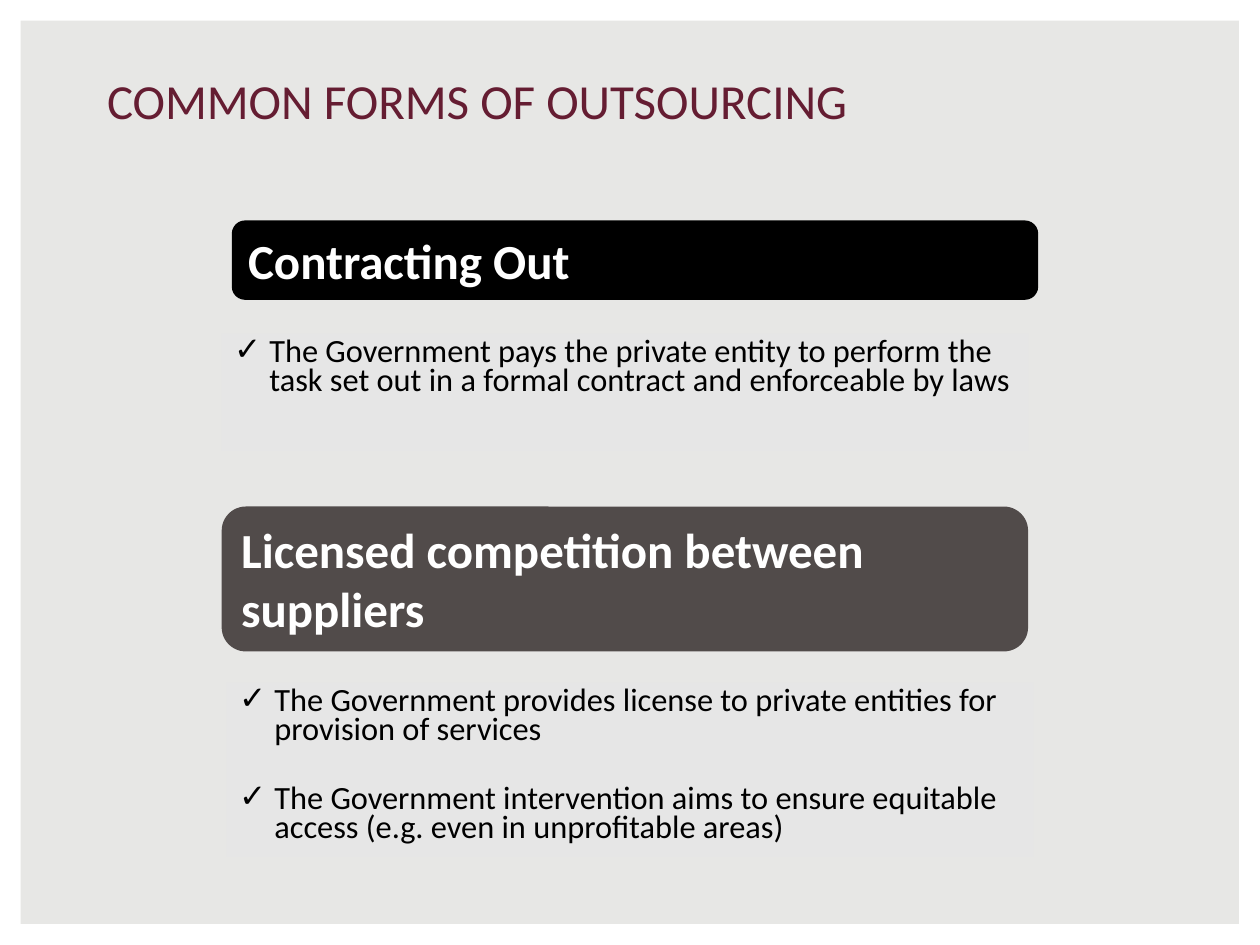
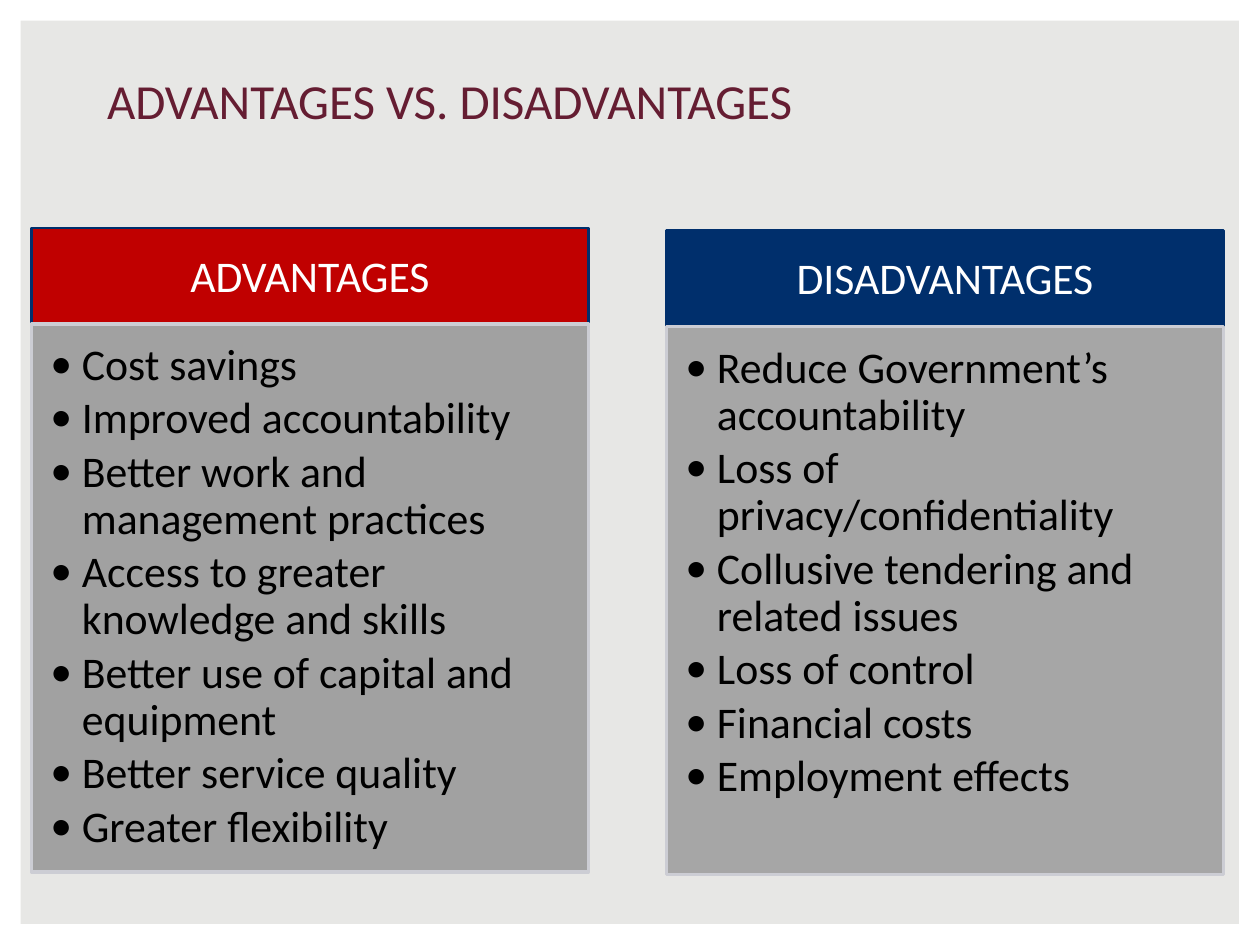
from lxml import etree
from pptx import Presentation
from pptx.dml.color import RGBColor
from pptx.enum.shapes import MSO_SHAPE
from pptx.enum.text import MSO_ANCHOR, PP_ALIGN
from pptx.oxml.ns import qn
from pptx.util import Inches, Pt

FONT = "Calibri"
BACKGROUND, WHITE, BLACK = "E7E7E5", "FFFFFF", "000000"
MAROON, RED, NAVY, BROWN = "651D32", "C00000", "002F6C", "514B4A"
PANEL, EDGE = "E6E6E6", "CCCDD4"

TITLE_FONT = {"name": FONT, "size": Pt(28), "bold": False}
BANNER_FONT = {"name": FONT, "size": Pt(28), "bold": True}
DETAIL_FONT = {"name": FONT, "size": Pt(18.5)}
COLUMN_FONT = {"name": FONT, "size": Pt(25)}

DETAIL_SPACING = {"line_spacing": Pt(16.6), "space_after": Pt(22.8)}
COLUMN_SPACING = {"line_spacing": 0.9, "space_after": Pt(3.5)}
HEADER_SPACING = {"alignment": PP_ALIGN.CENTER, "line_spacing": 0.9}

HEADER_MARGINS = (0.19, 0.11, 0.19, 0.11)
COLUMN_MARGINS = (0.15, 0.15, 0.19, 0.22)
DEFAULT_MARGINS = (0.1, 0.05, 0.1, 0.05)

ADVANTAGES = [
    "Cost savings",
    "Improved accountability",
    "Better work and management practices",
    "Access to greater knowledge and skills",
    "Better use of capital and equipment",
    "Better service quality",
    "Greater flexibility",
]
DISADVANTAGES = [
    "Reduce Government’s accountability",
    "Loss of privacy/confidentiality",
    "Collusive tendering and related issues",
    "Loss of control",
    "Financial costs",
    "Employment effects",
]


def color(value):
    """Turn a hex string into a colour."""
    return RGBColor.from_string(value)


def apply(target, values):
    """Set every attribute named in a dict of format values."""
    for name, value in values.items():
        setattr(target, name, value)


def add_bullet(paragraph, symbol, indent):
    """Give a paragraph a hanging bullet."""
    properties = paragraph._p.get_or_add_pPr()
    properties.set("marL", str(Inches(indent)))
    properties.set("indent", str(-Inches(indent)))
    etree.SubElement(properties, qn("a:buFont")).set("typeface", FONT)
    etree.SubElement(properties, qn("a:buChar")).set("char", symbol)


def write_text(shape, lines, font, font_color, spacing=None, bullet=None,
               anchor=MSO_ANCHOR.TOP, margins=DEFAULT_MARGINS):
    """Fill a shape with formatted paragraphs."""
    frame = shape.text_frame
    sides = ("margin_left", "margin_top", "margin_right", "margin_bottom")
    apply(frame, dict(zip(sides, map(Inches, margins))))
    apply(frame, {"word_wrap": True, "vertical_anchor": anchor})
    frame.text = "\n".join(lines)
    for paragraph in frame.paragraphs:
        apply(paragraph, {"alignment": PP_ALIGN.LEFT, **(spacing or {})})
        if bullet:
            add_bullet(paragraph, *bullet)
        for run in paragraph.runs:
            apply(run.font, font)
            run.font.color.rgb = color(font_color)


def add_box(slide, kind, box, fill, line=None, line_width=1.5):
    """Add a flat preset shape with an optional outline."""
    shape = slide.shapes.add_shape(kind, *map(Inches, box))
    shape.shadow.inherit = False
    shape.fill.solid()
    shape.fill.fore_color.rgb = color(fill)
    if line:
        shape.line.color.rgb = color(line)
        shape.line.width = Pt(line_width)
    else:
        shape.line.fill.background()
    return shape


def add_titled_slide(presentation, title):
    """Add a slide with the shared frame and title."""
    slide = presentation.slides.add_slide(presentation.slide_layouts[5])
    border = add_box(slide, MSO_SHAPE.FRAME, (0, 0, 10, 7.5), WHITE)
    border.adjustments[0] = 0.022
    position = dict(zip(("left", "top", "width", "height"),
                        map(Inches, (0.75, 0.51, 8.5, 0.57))))
    apply(slide.shapes.title, position)
    write_text(slide.shapes.title, [title], TITLE_FONT, MAROON,
               anchor=MSO_ANCHOR.BOTTOM)
    return slide


def add_banner(slide, text, box, fill):
    """Add a rounded heading banner."""
    banner = add_box(slide, MSO_SHAPE.ROUNDED_RECTANGLE, box, fill)
    write_text(banner, [text], BANNER_FONT, WHITE)


def add_details(slide, lines, box):
    """Add a panel of check-marked details."""
    panel = add_box(slide, MSO_SHAPE.RECTANGLE, box, PANEL)
    write_text(panel, lines, DETAIL_FONT, BLACK, DETAIL_SPACING, ("✓", 0.28))


def add_column(slide, heading, lines, left, top, header_fill, body_fill, edge_width):
    """Add a coloured header above a bulleted column."""
    header = add_box(slide, MSO_SHAPE.RECTANGLE, (left, top, 4.42, 0.79),
                     header_fill, NAVY)
    write_text(header, [heading], COLUMN_FONT, WHITE, HEADER_SPACING,
               anchor=MSO_ANCHOR.MIDDLE, margins=HEADER_MARGINS)
    body = add_box(slide, MSO_SHAPE.RECTANGLE, (left, top + 0.76, 4.42, 4.35),
                   body_fill, EDGE, edge_width)
    write_text(body, lines, COLUMN_FONT, BLACK, COLUMN_SPACING, ("•", 0.25),
               margins=COLUMN_MARGINS)


def add_forms_slide(presentation):
    """Build the slide on common forms of outsourcing."""
    slide = add_titled_slide(presentation, "COMMON FORMS OF OUTSOURCING")
    add_details(slide, [
        "The Government pays the private entity to perform the task set out "
        "in a formal contract and enforceable by laws",
    ], (1.76, 2.65, 6.4, 0.93))
    add_details(slide, [
        "The Government provides license to private entities for provision of services",
        "The Government intervention aims to ensure equitable access "
        "(e.g. even in unprofitable areas)",
    ], (1.8, 5.42, 6.4, 1.38))
    add_banner(slide, "Contracting Out", (1.84, 1.75, 6.4, 0.63), BLACK)
    add_banner(slide, "Licensed competition between suppliers",
               (1.76, 4.02, 6.4, 1.15), BROWN)


def add_comparison_slide(presentation):
    """Build the slide comparing advantages and disadvantages."""
    slide = add_titled_slide(presentation, "ADVANTAGES VS. DISADVANTAGES")
    add_column(slide, "ADVANTAGES", ADVANTAGES, 0.25, 1.81, RED, "A1A1A1", 2)
    add_column(slide, "DISADVANTAGES", DISADVANTAGES, 5.29, 1.83, NAVY, "A6A6A6", 1.5)


def main():
    """Create and save the presentation."""
    presentation = Presentation()
    apply(presentation, {"slide_width": Inches(10), "slide_height": Inches(7.5)})
    background = presentation.slide_master.background.fill
    background.solid()
    background.fore_color.rgb = color(BACKGROUND)
    add_forms_slide(presentation)
    add_comparison_slide(presentation)
    presentation.save("out.pptx")


if __name__ == "__main__":
    main()
